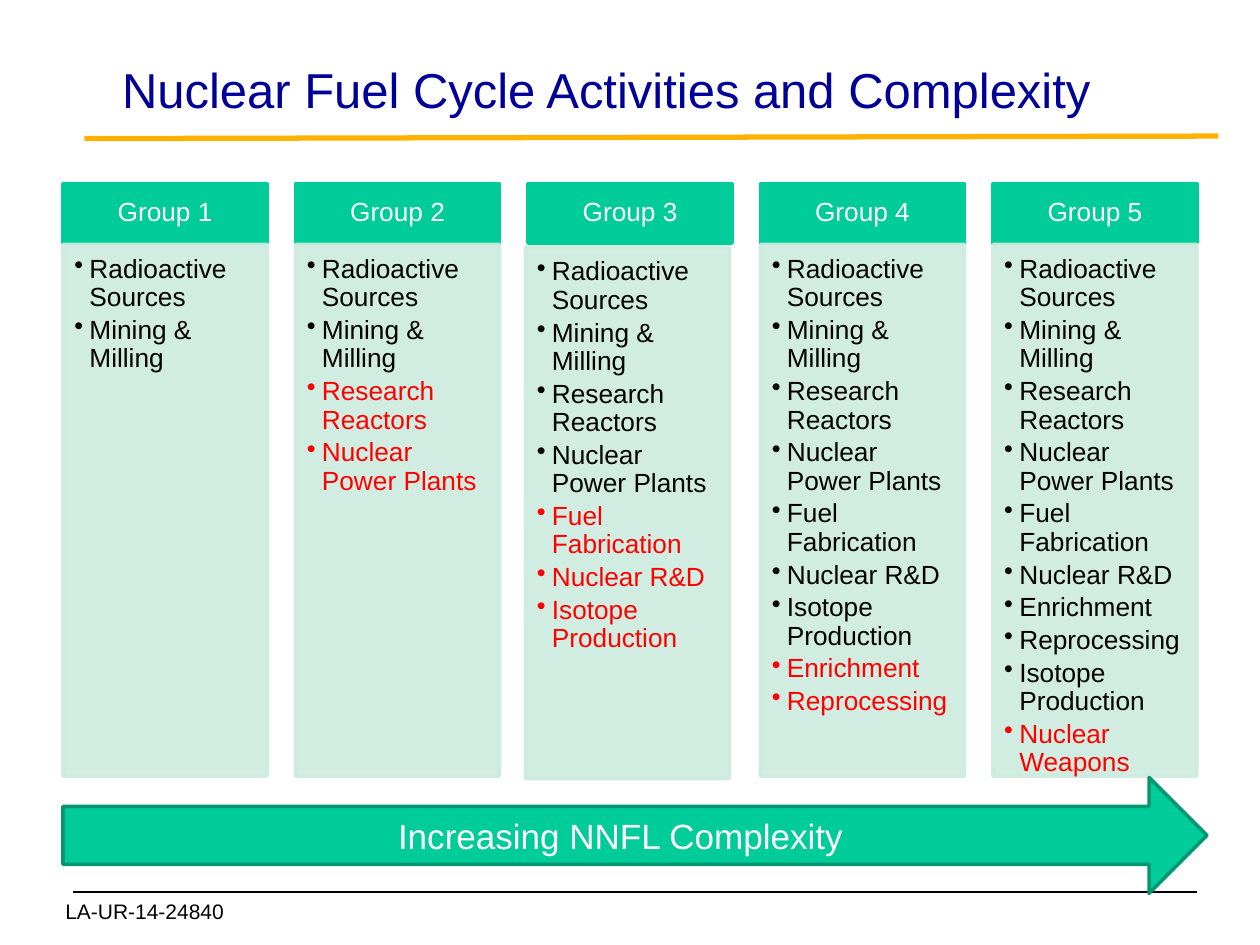
from dataclasses import dataclass

from lxml.etree import SubElement
from pptx import Presentation
from pptx.dml.color import RGBColor
from pptx.enum.shapes import MSO_CONNECTOR, MSO_SHAPE
from pptx.enum.text import MSO_ANCHOR, PP_ALIGN
from pptx.oxml.ns import qn
from pptx.util import Inches, Pt


@dataclass(frozen=True)
class Theme:
    font: str = "Arial"
    green: str = "00CC99"
    dark_green: str = "009771"
    pale_green: str = "CCECDE"
    gold: str = "FFB300"
    navy: str = "000099"
    black: str = "000000"
    white: str = "FFFFFF"
    red: str = "FF0000"
    title_size: int = 28
    arrow_size: int = 20
    group_size: int = 15
    footer_size: int = 12


@dataclass(frozen=True)
class Box:
    left: float
    top: float
    width: float
    height: float

    def emu(self):
        return [Inches(v) for v in (self.left, self.top, self.width, self.height)]


@dataclass(frozen=True)
class Group:
    activities: tuple[str, ...]
    added: int = 0
    body_shift: tuple[float, float] = (0, 0)


THEME = Theme()
BASIC = ("Radioactive Sources", "Mining & Milling")
REACTORS = BASIC + ("Research Reactors", "Nuclear Power Plants")
FUEL = REACTORS + ("Fuel Fabrication", "Nuclear R&D")
ISOTOPES = ("Isotope Production",)
SENSITIVE = ("Enrichment", "Reprocessing")
GROUPS = (
    Group(BASIC),
    Group(REACTORS, 2),
    Group(FUEL + ISOTOPES, 3, (-0.02, 0.02)),
    Group(FUEL + ISOTOPES + SENSITIVE, 2),
    Group(FUEL + SENSITIVE + ISOTOPES + ("Nuclear Weapons",), 1),
)
GROUP_LEFT, GROUP_PITCH, GROUP_WIDTH = 0.5, 1.845, 1.62


def style(paragraph, text: str, size: float, color: str, align=PP_ALIGN.LEFT) -> None:
    paragraph.text = text
    paragraph.alignment = align
    font = paragraph.font
    font.name, font.size = THEME.font, Pt(size)
    font.color.rgb = RGBColor.from_string(color)


def set_insets(frame, left: float, top: float, right: float, bottom: float) -> None:
    frame.margin_left, frame.margin_top = Inches(left), Inches(top)
    frame.margin_right, frame.margin_bottom = Inches(right), Inches(bottom)


def add_label(slide, box: Box, text: str, size: float, color: str, align=PP_ALIGN.LEFT) -> None:
    frame = slide.shapes.add_textbox(*box.emu()).text_frame
    frame.word_wrap = True
    style(frame.paragraphs[0], text, size, color, align)


def add_rule(slide, start: tuple, end: tuple, color: str, width: float) -> None:
    rule = slide.shapes.add_connector(
        MSO_CONNECTOR.STRAIGHT, *(Inches(v) for v in start + end))
    rule.line.color.rgb = RGBColor.from_string(color)
    rule.line.width = Pt(width)
    SubElement(rule._element.spPr, qn("a:effectLst"))


def add_block(slide, kind, box: Box, fill: str, line: str):
    block = slide.shapes.add_shape(kind, *box.emu())
    block.shadow.inherit = False
    block.fill.solid()
    block.fill.fore_color.rgb = RGBColor.from_string(fill)
    block.line.color.rgb = RGBColor.from_string(line)
    block.line.width = Pt(2)
    block.text_frame.word_wrap = True
    return block


def add_bullet(paragraph) -> None:
    properties = paragraph._p.get_or_add_pPr()
    properties.set("marL", str(Inches(0.12)))
    properties.set("indent", str(-Inches(0.12)))
    SubElement(properties, qn("a:buChar")).set("char", "•")


def add_group(slide, index: int, group: Group) -> None:
    left = GROUP_LEFT + index * GROUP_PITCH
    header = add_block(slide, MSO_SHAPE.RECTANGLE, Box(left, 1.46, GROUP_WIDTH, 0.47),
                       THEME.green, THEME.green).text_frame
    header.vertical_anchor = MSO_ANCHOR.MIDDLE
    set_insets(header, 0.12, 0.07, 0.12, 0.07)
    style(header.paragraphs[0], f"Group {index + 1}", THEME.group_size,
          THEME.white, PP_ALIGN.CENTER)
    header.paragraphs[0].line_spacing = 0.9

    dx, dy = group.body_shift
    body = add_block(slide, MSO_SHAPE.RECTANGLE,
                     Box(left + dx, 1.94 + dy, GROUP_WIDTH, 4.22),
                     THEME.pale_green, THEME.pale_green)
    for color in body._element.spPr.iter(qn("a:srgbClr")):
        SubElement(color, qn("a:alpha")).set("val", "90000")
    frame = body.text_frame
    frame.vertical_anchor = MSO_ANCHOR.TOP
    set_insets(frame, 0.09, 0.09, 0.12, 0.13)
    first_added = len(group.activities) - group.added
    for row, activity in enumerate(group.activities):
        paragraph = frame.add_paragraph() if row else frame.paragraphs[0]
        paragraph.level = 1
        add_bullet(paragraph)
        paragraph.line_spacing = 0.9
        paragraph.space_after = Pt(2.5)
        style(paragraph, activity, THEME.group_size,
              THEME.red if row >= first_added else THEME.black)


def main() -> None:
    deck = Presentation()
    deck.slide_width, deck.slide_height = Inches(10), Inches(7.5)
    slide = deck.slides.add_slide(deck.slide_layouts[6])

    add_rule(slide, (0.58, 7.08), (9.5, 7.08), THEME.black, 0.75)
    add_rule(slide, (0.67, 1.1), (9.67, 1.08), THEME.gold, 3)
    add_label(slide, Box(0.42, 7.08, 2, 0.3), "LA-UR-14-24840",
              THEME.footer_size, THEME.black)
    add_label(slide, Box(0.54, 0.42, 8.54, 0.75),
              "Nuclear Fuel Cycle Activities and Complexity",
              THEME.title_size, THEME.navy, PP_ALIGN.CENTER)

    for index, group in enumerate(GROUPS):
        add_group(slide, index, group)

    arrow = add_block(slide, MSO_SHAPE.RIGHT_ARROW, Box(0.5, 6.17, 9.08, 0.92),
                      THEME.green, THEME.dark_green).text_frame
    arrow.vertical_anchor = MSO_ANCHOR.MIDDLE
    style(arrow.paragraphs[0], "Increasing NNFL Complexity", THEME.arrow_size,
          THEME.white, PP_ALIGN.CENTER)

    deck.save("out.pptx")


if __name__ == "__main__":
    main()
